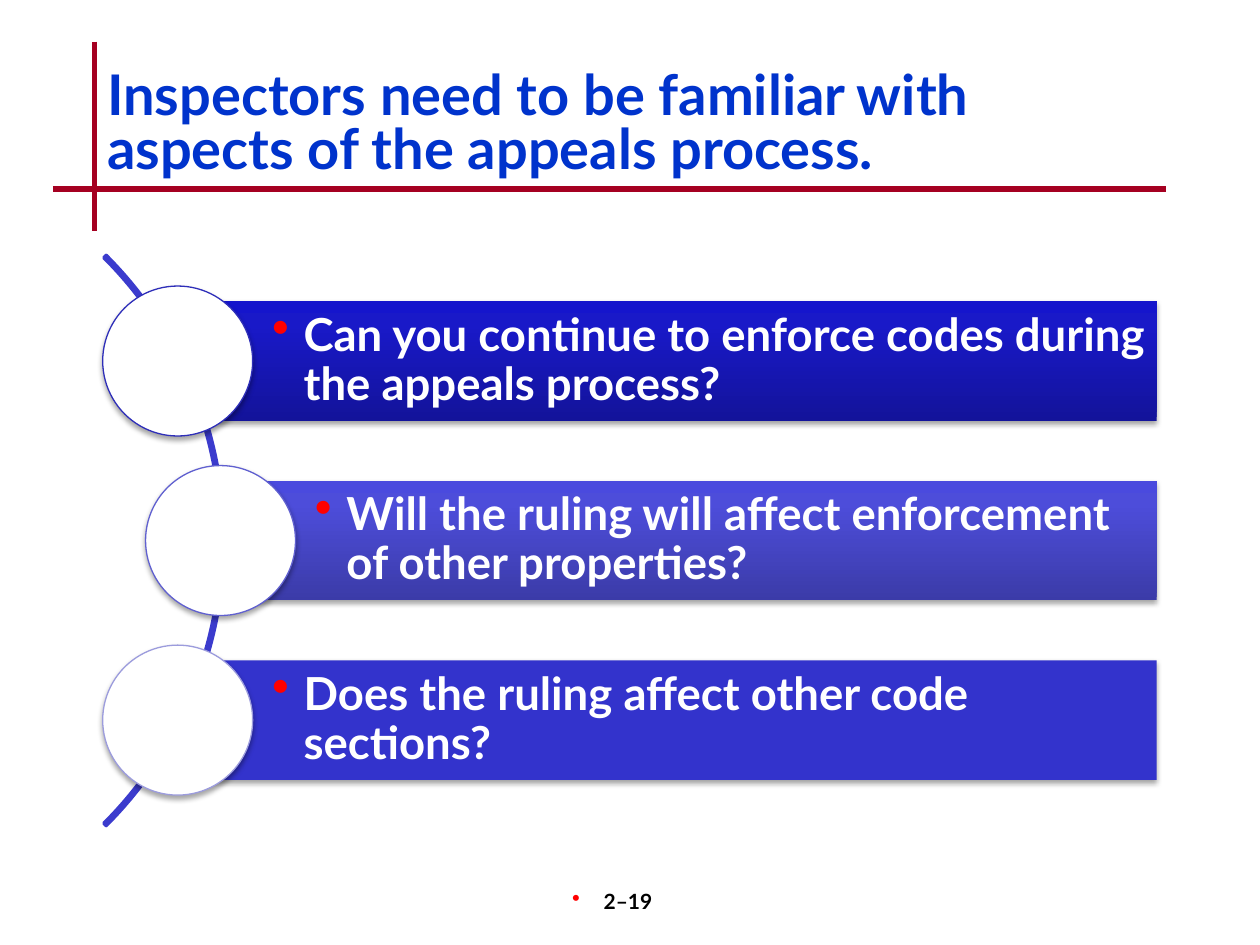
from copy import deepcopy
from dataclasses import dataclass

from lxml import etree
from pptx import Presentation
from pptx import util as u
from pptx.dml.color import RGBColor
from pptx.enum import shapes, text
from pptx.oxml.ns import qn


@dataclass(frozen=True)
class Theme:
    font: str = "Lato"
    title: str = "0033CC"
    rule: str = "A50021"
    arc: str = "3B3BCD"
    bullet: str = "FF0000"
    dark: str = "000000"
    light: str = "FFFFFF"
    title_size: int = 32
    body_size: int = 26
    footer_size: int = 12


ROWS = [
    ("Can you continue to enforce codes during the appeals process?",
     1.41, [("13139A", 0), ("1919C8", 0.8), ("1515CC", 1)], "2E2EB9"),
    ("Will the ruling will affect enforcement of other properties?",
     1.75, [("3B3BA8", 0), ("4D4DDA", 0.8), ("4A4ADE", 1)], "6060D0"),
    ("Does the ruling affect other code sections?",
     1.41, [("3333CC", 0)], "9C9CDD"),
]
ROW_TOP, ROW_STEP, BAR_HEIGHT = 2.39, 1.425, 0.95
BAR_RIGHT, CIRCLE = 9.18, 1.19


def rgb(value):
    return RGBColor.from_string(value)


def inches(*values):
    return [u.Inches(value) for value in values]


def add_element(parent, tag, **attributes):
    element = etree.SubElement(parent, qn(tag))
    for name, value in attributes.items():
        element.set(name, str(value))
    return element


def write(frame, content, *, font, size, color, align=text.PP_ALIGN.LEFT,
          anchor=text.MSO_ANCHOR.TOP, spacing=1.0,
          insets=(0.1, 0.05, 0.1, 0.05), bullet=None):
    frame.word_wrap = True
    frame.auto_size = text.MSO_AUTO_SIZE.NONE
    frame.vertical_anchor = anchor
    (frame.margin_left, frame.margin_top,
     frame.margin_right, frame.margin_bottom) = inches(*insets)
    para = frame.paragraphs[0]
    para.alignment = align
    para.line_spacing = spacing
    para.space_before = para.space_after = u.Pt(0)
    if bullet:
        properties = para._p.get_or_add_pPr()
        properties.set("marL", str(u.Inches(0.25)))
        properties.set("indent", str(-u.Inches(0.25)))
        add_element(add_element(properties, "a:buClr"), "a:srgbClr", val=bullet)
        add_element(properties, "a:buSzPct", val=110000)
        add_element(properties, "a:buChar", char="•")
    span = para.add_run()
    span.text = content
    span.font.name = font
    span.font.size = u.Pt(size)
    span.font.bold = True
    span.font.color.rgb = rgb(color)


def paint(shape, stops):
    if len(stops) == 1:
        shape.fill.solid()
        shape.fill.fore_color.rgb = rgb(stops[0][0])
        return
    shape.fill.gradient()
    shape.fill.gradient_angle = 90
    stop_list = shape._element.spPr.find(qn("a:gradFill")).find(qn("a:gsLst"))
    while len(stop_list) < len(stops):
        stop_list.append(deepcopy(stop_list[-1]))
    for stop, (color, position) in zip(shape.fill.gradient_stops, stops):
        stop.color.rgb = rgb(color)
        stop.position = position


def cast_shadow(shape):
    effects = add_element(shape._element.spPr, "a:effectLst")
    shadow = add_element(effects, "a:outerShdw", blurRad=u.Pt(3.1),
                         dist=u.Pt(1.8), dir=5400000, rotWithShape=0)
    color = add_element(shadow, "a:srgbClr", val="000000")
    add_element(color, "a:alpha", val=35000)


class Builder:
    def __init__(self, page, theme):
        self.page = page
        self.theme = theme

    def title(self, content):
        box = self.page.shapes.title
        box.left, box.top, box.width, box.height = inches(0.75, 0.5, 8.5, 1)
        write(box.text_frame, content, font=self.theme.font,
              size=self.theme.title_size, color=self.theme.title,
              anchor=text.MSO_ANCHOR.MIDDLE, spacing=0.8)

    def rule(self, *ends):
        line = self.page.shapes.add_connector(
            shapes.MSO_CONNECTOR.STRAIGHT, *inches(*ends))
        line.line.color.rgb = rgb(self.theme.rule)
        line.line.width = u.Pt(3)
        add_element(line._element.spPr, "a:effectLst")

    def arc(self):
        arc = self.page.shapes.add_shape(
            shapes.MSO_SHAPE.BLOCK_ARC, *inches(-4.62, 1.09, 6.4, 6.4))
        for index, value in enumerate((189, 27, 0.004)):
            arc.adjustments[index] = value
        arc.fill.background()
        arc.line.color.rgb = rgb(self.theme.arc)
        arc.line.width = u.Pt(2)
        arc.shadow.inherit = False

    def bar(self, content, left, top, stops):
        bar = self.page.shapes.add_shape(
            shapes.MSO_SHAPE.RECTANGLE,
            *inches(left, top, BAR_RIGHT - left, BAR_HEIGHT))
        paint(bar, stops)
        bar.line.fill.background()
        cast_shadow(bar)
        write(bar.text_frame, content, font=self.theme.font,
              size=self.theme.body_size, color=self.theme.light,
              anchor=text.MSO_ANCHOR.MIDDLE, spacing=0.9,
              insets=(0.75, 0.07, 0.07, 0.07), bullet=self.theme.bullet)

    def circle(self, center_x, center_y, outline):
        circle = self.page.shapes.add_shape(
            shapes.MSO_SHAPE.OVAL,
            *inches(center_x - CIRCLE / 2, center_y - CIRCLE / 2, CIRCLE, CIRCLE))
        paint(circle, [(self.theme.light, 0)])
        circle.line.color.rgb = rgb(outline)
        circle.line.width = u.Pt(0.75)
        cast_shadow(circle)

    def footer(self, content):
        box = self.page.shapes.add_textbox(*inches(3.92, 7, 2.08, 0.5))
        write(box.text_frame, content, font=self.theme.font,
              size=self.theme.footer_size, color=self.theme.dark,
              align=text.PP_ALIGN.CENTER, insets=(0.1, 0.05, 0.3, 0.05),
              bullet=self.theme.bullet)


def main():
    deck = Presentation()
    deck.slide_width, deck.slide_height = inches(10, 7.5)
    builder = Builder(deck.slides.add_slide(deck.slide_layouts[5]), Theme())
    builder.rule(0.75, 0.33, 0.75, 1.83)
    builder.rule(0.42, 1.5, 9.25, 1.5)
    builder.footer("2–19")
    builder.title("Inspectors need to be familiar with aspects of the appeals process.")
    builder.arc()
    for index, (content, left, stops, outline) in enumerate(ROWS):
        top = ROW_TOP + index * ROW_STEP
        builder.bar(content, left, top, stops)
        builder.circle(left, top + BAR_HEIGHT / 2, outline)
    deck.save("out.pptx")


if __name__ == "__main__":
    main()
